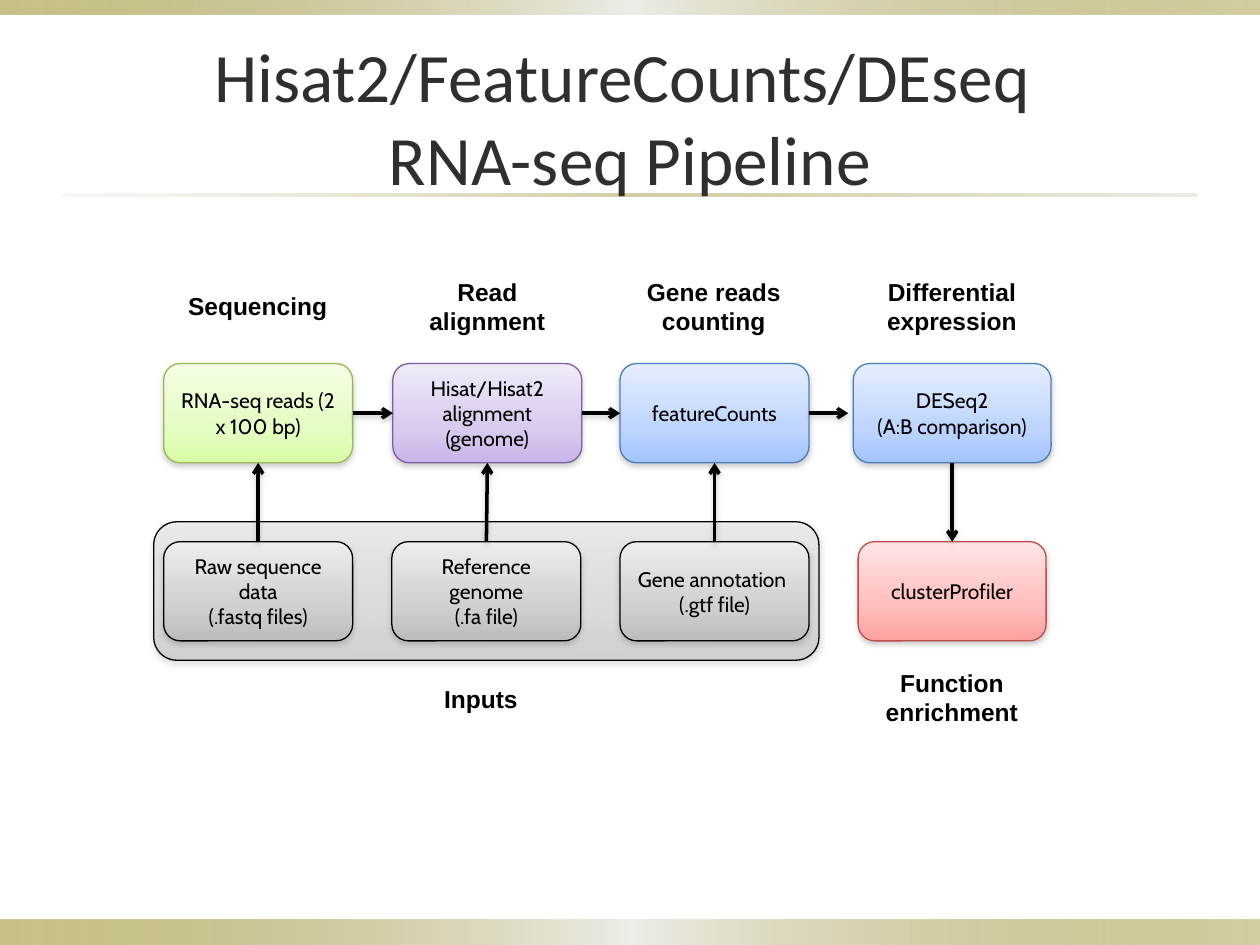
from dataclasses import dataclass
from typing import Optional

from lxml.etree import SubElement
from pptx import Presentation
from pptx.dml.color import RGBColor
from pptx.enum.shapes import MSO_CONNECTOR, MSO_SHAPE
from pptx.enum.text import MSO_ANCHOR, MSO_AUTO_SIZE, PP_ALIGN
from pptx.oxml.ns import qn
from pptx.util import Cm, Pt

BLACK = RGBColor(0x00, 0x00, 0x00)
TITLE_GREY = RGBColor(0x2F, 0x2F, 0x2F)
SHADOW_GREY = RGBColor(0x80, 0x80, 0x80)
OLIVE = RGBColor(0x91, 0x84, 0x15)
PALE = RGBColor(0xEE, 0xED, 0xE8)
SAND = RGBColor(0xDC, 0xD9, 0xCC)

BOX_WIDTH, BOX_HEIGHT = 3.81, 2.0
STEP_TOP, INPUT_TOP = 7.33, 10.92
LABEL_TOP = 5.46
TOP, LEFT, BOTTOM, RIGHT = range(4)


@dataclass(frozen=True)
class Stop:
    position: int
    color: RGBColor
    alpha: int = 100


@dataclass(frozen=True)
class Palette:
    outline: RGBColor
    colors: tuple[RGBColor, RGBColor, RGBColor]

    def stops(self, alpha: int = 100) -> list[Stop]:
        return [Stop(at, color, alpha) for at, color in zip((0, 65, 100), self.colors)]


@dataclass(frozen=True)
class Box:
    lines: str
    left: float
    top: float
    palette: Palette
    width: float = BOX_WIDTH


@dataclass(frozen=True)
class Label:
    text: str
    left: float
    top: float
    width: float
    height: float = 1.45
    wrap: bool = True


def palette(outline: str, *colors: str) -> Palette:
    light, middle, dark = map(RGBColor.from_string, colors)
    return Palette(RGBColor.from_string(outline), (light, middle, dark))


GREEN = palette("98B954", "F5FFE6", "E4FDC2", "DAFDA7")
PURPLE = palette("7D60A0", "F0EAF9", "D9CBEE", "C9B5E8")
BLUE = palette("4A7EBB", "E5EEFF", "BFD5FF", "A3C4FF")
RED = palette("BE4B48", "FFE5E5", "FFBEBD", "FFA2A1")
GREY = palette("000000", "EDEDED", "D0D0D0", "BCBCBC")

STEPS = [
    Box("RNA-seq reads (2 x 100 bp)", 3.3, STEP_TOP, GREEN),
    Box("Hisat/Hisat2\nalignment (genome)", 7.92, STEP_TOP, PURPLE),
    Box("featureCounts", 12.5, STEP_TOP, BLUE),
    Box("DESeq2\n(A:B comparison)", 17.2, STEP_TOP, BLUE, 3.99),
]
INPUTS = [
    Box("Raw sequence data\n(.fastq files)", 3.3, INPUT_TOP, GREY),
    Box("Reference genome\n(.fa file)", 7.9, INPUT_TOP, GREY),
    Box("Gene annotation \n(.gtf file)", 12.5, INPUT_TOP, GREY),
]
ENRICHMENT = Box("clusterProfiler", 17.3, INPUT_TOP, RED, 3.79)
LABELS = [
    Label("Sequencing", 3.53, 5.74, 3.33, 0.86, wrap=False),
    Label("Read alignment", 8.1, LABEL_TOP, 3.45),
    Label("Gene reads counting", 12.09, LABEL_TOP, 4.6),
    Label("Differential expression", 16.89, LABEL_TOP, 4.6),
    Label("Function enrichment", 16.89, 13.34, 4.6),
    Label("Inputs", 8.69, 13.67, 2.01, 0.86, wrap=False),
]


def add_color(parent, color: RGBColor, alpha: int) -> None:
    rgb = SubElement(parent, qn("a:srgbClr"), val=str(color))
    if alpha < 100:
        SubElement(rgb, qn("a:alpha"), val=str(alpha * 1000))


def fill_gradient(shape, stops: list[Stop], angle: int) -> None:
    shape.fill.gradient()
    gradient = shape._element.spPr.find(qn("a:gradFill"))
    for child in list(gradient):
        gradient.remove(child)
    stop_list = SubElement(gradient, qn("a:gsLst"))
    for stop in stops:
        entry = SubElement(stop_list, qn("a:gs"), pos=str(stop.position * 1000))
        add_color(entry, stop.color, stop.alpha)
    SubElement(gradient, qn("a:lin"), ang=str(angle * 60000), scaled="0")


def add_shadow(properties) -> None:
    effects = properties.find(qn("a:effectLst"))
    if effects is None:
        effects = SubElement(properties, qn("a:effectLst"))
    shadow = SubElement(effects, qn("a:outerShdw"), blurRad=str(Pt(3.1)),
                        dist=str(Pt(1.6)), dir="5400000", rotWithShape="0")
    add_color(shadow, SHADOW_GREY, 38)


def add_band(slide, left: float, top: float, width: float, height: float,
             stops: list[Stop]) -> None:
    band = slide.shapes.add_shape(MSO_SHAPE.RECTANGLE, Cm(left), Cm(top), Cm(width), Cm(height))
    band.shadow.inherit = False
    band.line.fill.background()
    fill_gradient(band, stops, 0)


def write(frame, text: str, font_name: str, size: float, color: RGBColor,
          bold: bool = False) -> None:
    frame.text = text
    for paragraph in frame.paragraphs:
        paragraph.alignment = PP_ALIGN.CENTER
        font = paragraph.font
        font.name, font.size, font.bold = font_name, Pt(size), bold
        font.color.rgb = color


def add_rounded(slide, left: float, top: float, width: float, height: float,
                colors: Palette, alpha: int = 100):
    rounded = slide.shapes.add_shape(MSO_SHAPE.ROUNDED_RECTANGLE,
                                     Cm(left), Cm(top), Cm(width), Cm(height))
    fill_gradient(rounded, colors.stops(alpha), 90)
    rounded.line.color.rgb = colors.outline
    rounded.line.width = Pt(0.75)
    rounded.shadow.inherit = False
    add_shadow(rounded._element.spPr)
    return rounded


def add_box(slide, box: Box):
    rounded = add_rounded(slide, box.left, box.top, box.width, BOX_HEIGHT, box.palette)
    rounded.text_frame.vertical_anchor = MSO_ANCHOR.MIDDLE
    write(rounded.text_frame, box.lines, "Cabin", 12, BLACK)
    return rounded


def add_label(slide, label: Label) -> None:
    frame = slide.shapes.add_textbox(Cm(label.left), Cm(label.top),
                                     Cm(label.width), Cm(label.height)).text_frame
    frame.word_wrap = label.wrap
    frame.auto_size = MSO_AUTO_SIZE.SHAPE_TO_FIT_TEXT
    write(frame, label.text, "Arial", 14, BLACK, bold=True)


def add_arrow(slide, source, source_side: int, target, target_side: int,
              gap: Optional[float] = None) -> None:
    """Join two boxes; with a gap, stop that far left of the target instead."""
    arrow = slide.shapes.add_connector(MSO_CONNECTOR.STRAIGHT, 0, 0, 0, 0)
    arrow.begin_connect(source, source_side)
    if gap is None:
        arrow.end_connect(target, target_side)
    else:
        arrow.end_x = target.left - Cm(gap)
        arrow.end_y = target.top + target.height // 2
    arrow.line.color.rgb = BLACK
    arrow.line.width = Pt(2)
    SubElement(arrow.line._get_or_add_ln(), qn("a:tailEnd"), type="arrow")
    add_shadow(arrow._element.spPr)


def main() -> None:
    deck = Presentation()
    deck.slide_width, deck.slide_height = Cm(25.4), Cm(19.05)
    slide = deck.slides.add_slide(deck.slide_layouts[5])

    edge = [Stop(0, OLIVE, 50), Stop(50, PALE), Stop(100, OLIVE, 40)]
    add_band(slide, 0, 18.54, 25.4, 0.51, edge)
    add_band(slide, 0, 0, 25.4, 0.3, edge)
    add_band(slide, 1.27, 3.91, 22.86, 0.05,
             [Stop(0, SAND, 20), Stop(50, OLIVE, 40), Stop(100, SAND, 50)])

    add_rounded(slide, 3.1, 10.52, 13.41, 2.79, GREY, alpha=51)
    steps = [add_box(slide, step) for step in STEPS]
    inputs = [add_box(slide, source) for source in INPUTS]
    enrichment = add_box(slide, ENRICHMENT)
    for label in LABELS:
        add_label(slide, label)

    for step, following in zip(steps, steps[1:]):
        add_arrow(slide, step, RIGHT, following, LEFT,
                  gap=0.1 if following is steps[-1] else None)
    for source, step in zip(inputs, steps):
        add_arrow(slide, source, TOP, step, BOTTOM)
    add_arrow(slide, steps[-1], BOTTOM, enrichment, TOP)

    title = slide.shapes.title
    title.left, title.top, title.width, title.height = Cm(1.27), Cm(0.76), Cm(22.86), Cm(3.18)
    title.text_frame.vertical_anchor = MSO_ANCHOR.MIDDLE
    title.text_frame.auto_size = MSO_AUTO_SIZE.NONE
    write(title.text_frame, "Hisat2/FeatureCounts/DEseq \vRNA-seq Pipeline",
          "Calibri", 39.6, TITLE_GREY)
    slide.shapes._spTree.append(title._element)

    deck.save("out.pptx")


if __name__ == "__main__":
    main()
